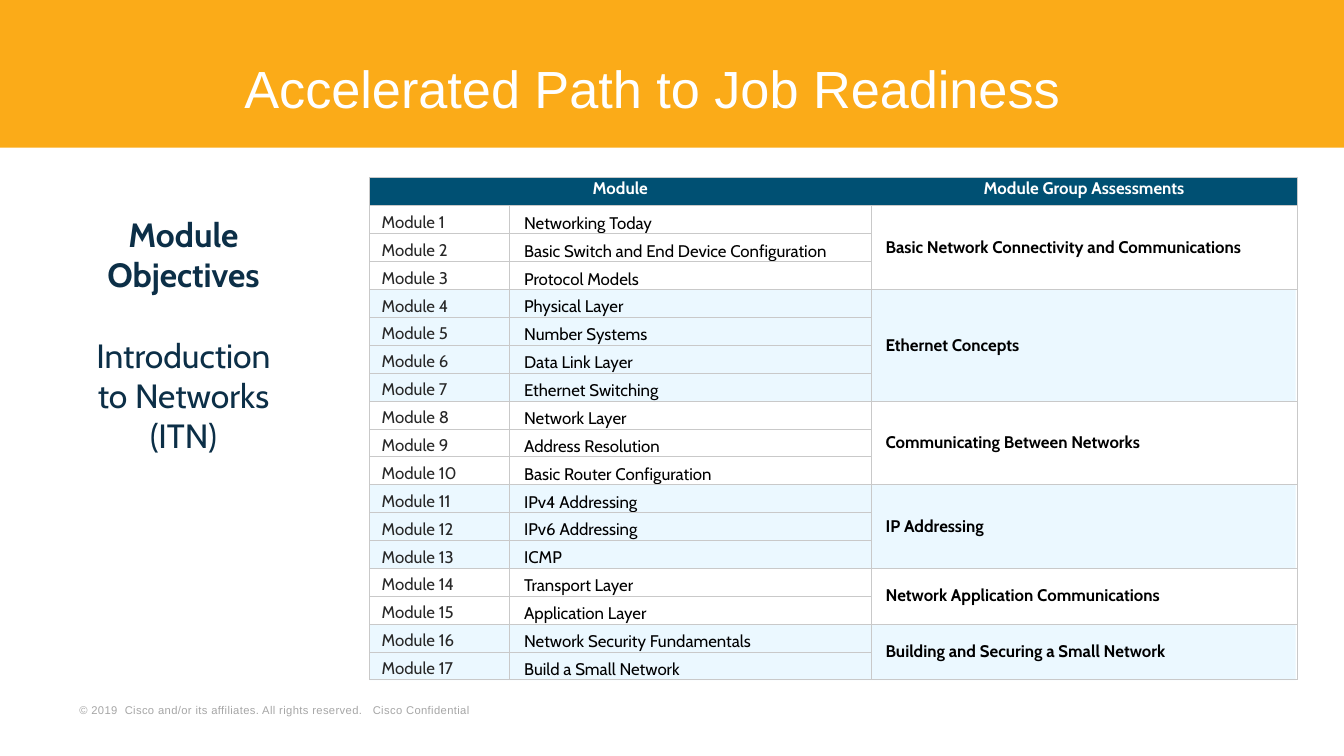
from dataclasses import dataclass

from lxml.etree import SubElement
from pptx import Presentation
from pptx.dml.color import RGBColor
from pptx.enum.shapes import MSO_SHAPE
from pptx.enum.text import MSO_ANCHOR, PP_ALIGN
from pptx.oxml import parse_xml
from pptx.oxml.ns import nsdecls, qn
from pptx.util import Inches, Pt

TITLE = "Accelerated Path to Job Readiness"
COPYRIGHT = "© 2019  Cisco and/or its affiliates. All rights reserved.   Cisco Confidential"
OBJECTIVES = [("Module", True, 0), ("Objectives", True, 0),
              ("Introduction to Networks (ITN)", False, 21.6)]
HEADINGS = {0: "Module", 2: "Module Group Assessments"}
ASSESSMENTS = [
    ("Basic Network Connectivity and Communications",
     ["Networking Today", "Basic Switch and End Device Configuration", "Protocol Models"]),
    ("Ethernet Concepts",
     ["Physical Layer", "Number Systems", "Data Link Layer", "Ethernet Switching"]),
    ("Communicating Between Networks",
     ["Network Layer", "Address Resolution", "Basic Router Configuration"]),
    ("IP Addressing", ["IPv4 Addressing", "IPv6 Addressing", "ICMP"]),
    ("Network Application Communications", ["Transport Layer", "Application Layer"]),
    ("Building and Securing a Small Network",
     ["Network Security Fundamentals", "Build a Small Network"]),
]
MODULE_COUNT = sum(len(modules) for _, modules in ASSESSMENTS)
SLIDE_WIDTH = 10
SLIDE_HEIGHT = SLIDE_WIDTH * 9 / 16
LEFT, TOP, WIDTH, HEIGHT = 2.75, 1.32, 6.89, 3.74
COLUMNS = (1.04, 2.69, 3.17)
HEADER_HEIGHT = 0.21
ROW_HEIGHT = (HEIGHT - HEADER_HEIGHT) / MODULE_COUNT


@dataclass(frozen=True)
class Theme:
    heading_font: str = "Arial"
    body_font: str = "Cabin"
    banner: str = "FBAB18"
    header: str = "005073"
    band: str = "B0E7FF"
    border: str = "C9C9C9"
    white: str = "FFFFFF"
    black: str = "000000"
    number: str = "282828"
    navy: str = "0C2F47"
    grey: str = "A6A6A6"
    title_size: int = 28
    objective_size: int = 18
    table_size: int = 9
    copyright_size: int = 6


THEME = Theme()


def add_run(paragraph, text, font, size, color, bold=False):
    run = paragraph.add_run()
    run.text = text
    run.font.name = font
    run.font.size = Pt(size)
    run.font.bold = bold
    run.font.color.rgb = RGBColor.from_string(color)
    return run


def add_block(slide, box, color, opacity=None):
    block = slide.shapes.add_shape(MSO_SHAPE.RECTANGLE, *map(Inches, box))
    block.shadow.inherit = False
    block.line.fill.background()
    block.fill.solid()
    block.fill.fore_color.rgb = RGBColor.from_string(color)
    if opacity:
        tint = block.fill._xPr.find(".//" + qn("a:srgbClr"))
        SubElement(tint, qn("a:alpha"), val=str(opacity * 1000))


def add_frame(slide, box, anchor, margins=(0.1, 0.05)):
    frame = slide.shapes.add_textbox(*map(Inches, box)).text_frame
    frame.word_wrap = True
    frame.vertical_anchor = anchor
    frame.margin_left = frame.margin_right = Inches(margins[0])
    frame.margin_top = frame.margin_bottom = Inches(margins[1])
    return frame


def style_cell(cell, fill=None, open_sides=""):
    cell.margin_left = cell.margin_right = cell.margin_top = cell.margin_bottom = 0
    if fill:
        cell.fill.solid()
        cell.fill.fore_color.rgb = RGBColor.from_string(fill)
    else:
        cell.fill.background()
    properties = cell._tc.get_or_add_tcPr()
    stroke = f'<a:solidFill><a:srgbClr val="{THEME.border}"/></a:solidFill>'
    for position, side in enumerate("LRTB"):
        paint = "<a:noFill/>" if side in open_sides else stroke
        properties.insert(position, parse_xml(
            f'<a:ln{side} {nsdecls("a")} w="3175">{paint}</a:ln{side}>'))
    if cell.is_spanned:
        SubElement(cell.text_frame.paragraphs[0]._p, qn("a:endParaRPr"),
                   sz=str(THEME.table_size * 100))


def write_cell(cell, text, color, bold=False, indent=0.11, anchor=MSO_ANCHOR.MIDDLE,
               line=None, align=PP_ALIGN.LEFT):
    cell.margin_left = Inches(indent)
    cell.vertical_anchor = anchor
    paragraph = cell.text_frame.paragraphs[0]
    paragraph.alignment = align
    if line:
        paragraph.line_spacing = Pt(line)
    add_run(paragraph, text, THEME.body_font, THEME.table_size, color, bold)


def add_modules(slide):
    row = 1
    groups = []
    for index, (assessment, modules) in enumerate(ASSESSMENTS):
        groups.append((row, assessment, modules))
        if index % 2:
            band_top = TOP + HEADER_HEIGHT + (row - 1) * ROW_HEIGHT
            add_block(slide, (LEFT, band_top, WIDTH, len(modules) * ROW_HEIGHT), THEME.band, 25)
        row += len(modules)

    table = slide.shapes.add_table(MODULE_COUNT + 1, len(COLUMNS),
                                   *map(Inches, (LEFT, TOP, WIDTH, HEIGHT))).table
    table.first_row = table.horz_banding = False
    for column, width in zip(table.columns, COLUMNS):
        column.width = Inches(width)
    for number, table_row in enumerate(table.rows):
        table_row.height = Inches(ROW_HEIGHT if number else HEADER_HEIGHT)
    table.cell(0, 0).merge(table.cell(0, 1))
    for first, _, modules in groups:
        table.cell(first, 2).merge(table.cell(first + len(modules) - 1, 2))
    for cell, open_sides in zip(table.rows[0].cells, ("R", "LR", "L")):
        style_cell(cell, THEME.header, open_sides)
    for number in range(1, MODULE_COUNT + 1):
        for cell in table.rows[number].cells:
            style_cell(cell)

    for column, heading in HEADINGS.items():
        write_cell(table.cell(0, column), heading, THEME.white, True, 0,
                   line=8, align=PP_ALIGN.CENTER)
    for first, assessment, modules in groups:
        write_cell(table.cell(first, 2), assessment, THEME.black, True)
        for number, module in enumerate(modules, first):
            write_cell(table.cell(number, 0), f"Module {number}", THEME.number,
                       indent=0.09, line=14)
            write_cell(table.cell(number, 1), module, THEME.black, anchor=MSO_ANCHOR.BOTTOM)


def main():
    """Build the module objectives slide."""
    deck = Presentation()
    deck.slide_width, deck.slide_height = Inches(SLIDE_WIDTH), Inches(SLIDE_HEIGHT)
    slide = deck.slides.add_slide(deck.slide_layouts[6])

    copyright_line = add_frame(slide, (0.52, 5.19, 3.72, 0.17), MSO_ANCHOR.BOTTOM, (0.07, 0.03))
    notice = add_run(copyright_line.paragraphs[0], COPYRIGHT, THEME.heading_font,
                     THEME.copyright_size, THEME.grey)
    notice.font._element.set("spc", "20")

    add_modules(slide)

    add_block(slide, (0, 0, SLIDE_WIDTH, 1.1), THEME.banner)
    title = add_frame(slide, (1.72, 0.35, 7.93, 0.69), MSO_ANCHOR.MIDDLE).paragraphs[0]
    title.line_spacing = 0.8
    add_run(title, TITLE, THEME.heading_font, THEME.title_size, THEME.white)

    objectives = add_frame(slide, (0.52, 1.54, 1.69, 1.92), MSO_ANCHOR.TOP)
    for index, (text, bold, gap) in enumerate(OBJECTIVES):
        paragraph = objectives.add_paragraph() if index else objectives.paragraphs[0]
        paragraph.alignment = PP_ALIGN.CENTER
        if gap:
            paragraph.space_before = Pt(gap)
        add_run(paragraph, text, THEME.body_font, THEME.objective_size, THEME.navy, bold)

    deck.save("out.pptx")


if __name__ == "__main__":
    main()
